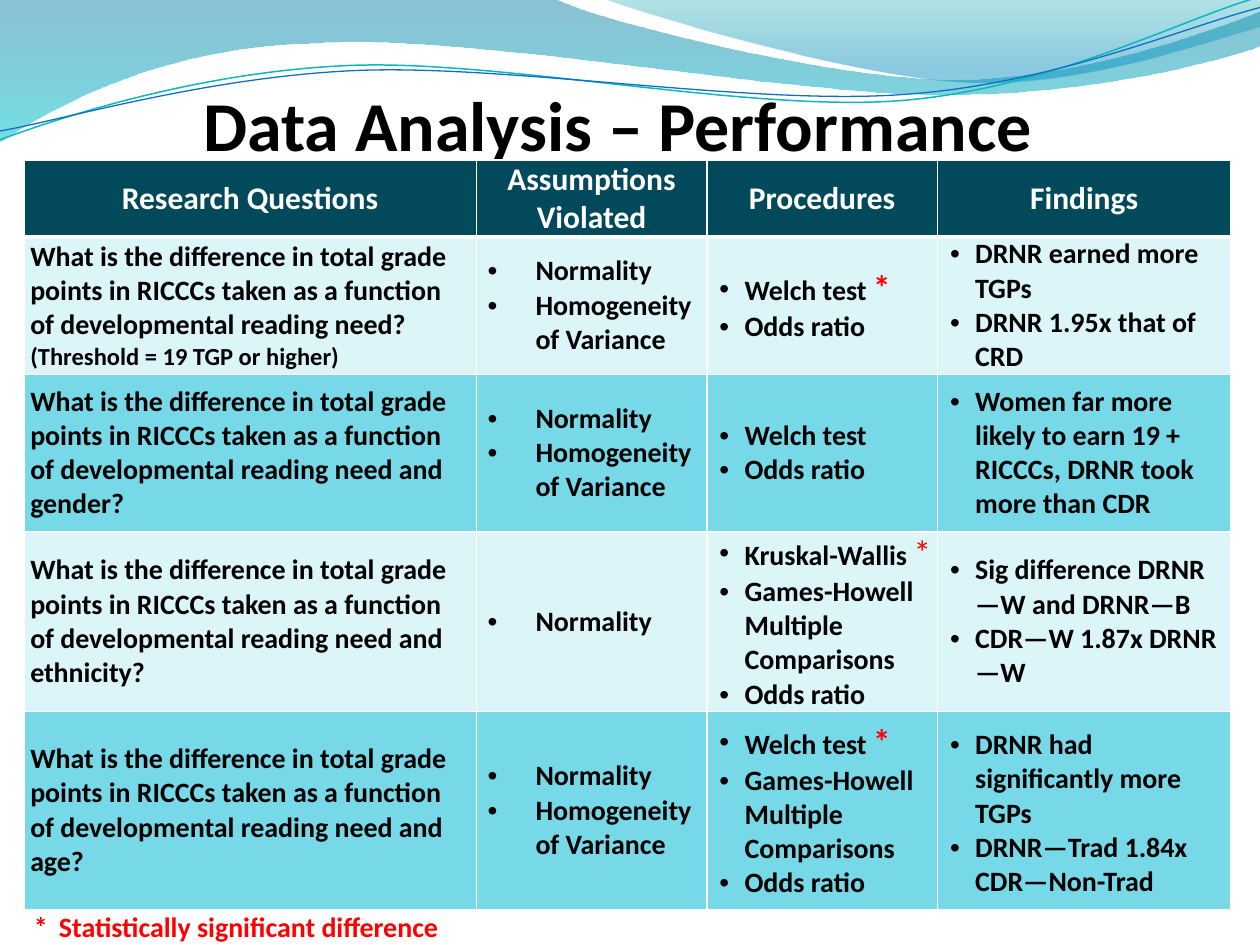
"""Build the Data Analysis slide: waves, title, findings table and footnote."""
from math import cos, radians, sin
from lxml.etree import Element, SubElement
from pptx import Presentation
from pptx.dml.color import RGBColor
from pptx.enum.text import MSO_ANCHOR, MSO_AUTO_SIZE, PP_ALIGN
from pptx.oxml.ns import qn
from pptx.util import Inches, Pt

BLACK, WHITE, RED = "000000", "FFFFFF", "FF0000"
HEADER_FILL, BANDS = "03495C", ("DBF5F9", "77D9E8")
STAR = ("*", 20, RED, True)
LIGHT_STAR = ("*", 20, RED, False)


def paint(color, value):
    color.rgb = RGBColor.from_string(value)


def add_run(para, text, size=16, color=BLACK, bold=True):
    span = para.add_run()
    span.text = text
    span.font.name = "Calibri"
    span.font.size = Pt(size)
    span.font.bold = bold
    paint(span.font.color, color)


deck = Presentation()
deck.slide_width, deck.slide_height = Inches(10), Inches(7.5)
column = deck.slide_width // 10
row = deck.slide_height / 7.5
page = deck.slides.add_slide(deck.slide_layouts[5])

waves = [
    {"start": (0, 0), "gradient": ((0, "0074A1", 45), (1, "00C6CF", 55)), "parts": [
        (4.4, -0.01), (4.76, 0.17, 6.64, 0.63, 7.58, 0.63), (8.53, 0.63, 9.58, 0.26, 10, 0.09),
        (10.01, 0.36), (9.83, 0.44, 8.7, 0.76, 7.46, 0.75), (6.22, 0.75, 3.82, 0.28, 2.57, 0.34),
        (1.29, 0.36, 0.46, 0.83, -0.01, 1.13), (0, 0)]},
    {"start": (4.79, -0.01), "gradient": ((0, "00A1A9", 30), (0.8, "008BBF", 45)), "parts": [
        (5.09, 0.11, 6.82, 0.62, 7.69, 0.65), (8.56, 0.69, 9.61, 0.32, 10, 0.21), (10, 0),
        (4.79, -0.01)]},
    {"start": (0, 1.11), "line": ("0AB8BF", 0.85), "center": (4.99, 0.57), "parts": [
        (0.48, 0.93, 1.58, 0.57, 2.77, 0.52), (3.95, 0.47, 5.93, 0.89, 7.13, 0.8),
        (8.33, 0.71, 9.38, 0.15, 9.98, -0.02)]},
    {"start": (0, 1.04), "line": ("0F6FC6", 0.75), "center": (5, 0.59), "parts": [
        (0.47, 0.96, 1.64, 0.61, 2.83, 0.56), (4.03, 0.51, 5.97, 0.84, 7.17, 0.75),
        (8.36, 0.67, 9.41, 0.21, 10, 0.06)]},
]
TILT = 2.7
for wave in waves:
    tilt = radians(TILT if "center" in wave else 0)
    cx, cy = wave.get("center", (0, 0))
    segments = []
    for part in [wave["start"]] + wave["parts"]:
        pairs = zip(part[::2], part[1::2])
        segments.append([(round((cx + (x - cx) * cos(tilt) - (y - cy) * sin(tilt)) * column),
                          round((cy + (x - cx) * sin(tilt) + (y - cy) * cos(tilt)) * row))
                         for x, y in pairs])
    builder = page.shapes.build_freeform(*segments[0][0])
    builder.add_line_segments([segment[-1] for segment in segments[1:]], close="gradient" in wave)
    ribbon = builder.convert_to_shape()
    ribbon.shadow.inherit = False
    for straight, segment in zip(list(ribbon.element.iter(qn("a:lnTo"))), segments[1:]):
        if len(segment) == 3:
            curve = Element(qn("a:cubicBezTo"))
            for x, y in segment:
                SubElement(curve, qn("a:pt"), x=str(x - ribbon.left), y=str(y - ribbon.top))
            straight.getparent().replace(straight, curve)
    if "gradient" in wave:
        ribbon.line.fill.background()
        ribbon.fill.gradient()
        ribbon.fill.gradient_angle = 270
        for stop, (position, value, _) in zip(ribbon.fill.gradient_stops, wave["gradient"]):
            stop.position = position
            paint(stop.color, value)
        for tint, (_, _, opacity) in zip(ribbon.element.iter(qn("a:srgbClr")), wave["gradient"]):
            SubElement(tint, qn("a:alpha"), val=str(opacity * 1000))
    else:
        value, weight = wave["line"]
        ribbon.rotation = 360 - TILT
        ribbon.fill.background()
        paint(ribbon.line.color, value)
        ribbon.line.width = Pt(weight)

title = page.shapes.title
title.element.getparent().append(title.element)
title.left, title.top = int(0.17 * column), int(0.52 * row)
title.width, title.height = int(9.59 * column), int(0.92 * row)
title.text_frame.auto_size = MSO_AUTO_SIZE.NONE
title.text_frame.vertical_anchor = MSO_ANCHOR.MIDDLE
para = title.text_frame.paragraphs[0]
para.alignment = PP_ALIGN.CENTER
add_run(para, "Data Analysis – Performance ", 40)

headings = ["Research Questions", "Assumptions Violated", "Procedures", "Findings"]
question = "What is the difference in total grade points in RICCCs taken as a function of developmental reading need"
normality, variance = [("Normality",)], [("Homogeneity of Variance",)]
welch, odds = ("Welch test ",), [("Odds ratio",)]
games = [("Games-Howell Multiple Comparisons",)]
body = [
    [[[(question + "?",)], [("(Threshold = 19 TGP or higher)", 14)]],
     [normality, variance], [[welch, STAR], odds],
     [[("DRNR earned more TGPs",)], [("DRNR 1.95x that of CRD",)]]],
    [[[(question + " and gender?",)]],
     [normality, variance], [[("Welch test",)], odds],
     [[("Women far more likely to earn 19 + RICCCs, DRNR took more than CDR",)]]],
    [[[(question + " and ethnicity?",)]],
     [normality], [[("Kruskal-Wallis ",), LIGHT_STAR], games, odds],
     [[("Sig difference DRNR—W and DRNR—B",)], [("CDR—W 1.87x DRNR—W",)]]],
    [[[(question + " and age?",)]],
     [normality, variance], [[welch, STAR], games, odds],
     [[("DRNR had significantly more TGPs",)], [("DRNR—Trad 1.84x CDR—Non-Trad",)]]],
]
grid = [[[[(heading, 18, WHITE)]] for heading in headings]] + body
widths, heights = (3.59, 1.83, 1.83, 2.33), (0.5, 1.09, 1.25, 1.25, 1.57)
indents = (None, (0.42, -0.38), (0.25, -0.2), (0.25, -0.2))
table = page.shapes.add_table(len(heights), len(widths), int(0.19 * column), int(1.27 * row),
                              int(sum(widths) * column), int(sum(heights) * row)).table
for table_column, width in zip(table.columns, widths):
    table_column.width = int(width * column)
for table_row, height in zip(table.rows, heights):
    table_row.height = int(height * row)

for r, cells in enumerate(grid):
    for c, paragraphs in enumerate(cells):
        cell = table.cell(r, c)
        cell.vertical_anchor = MSO_ANCHOR.MIDDLE
        cell.margin_left = cell.margin_right = int(0.05 * column)
        cell.margin_top = cell.margin_bottom = 0
        properties = cell._tc.get_or_add_tcPr()
        for side in ("lnL", "lnR", "lnT", "lnB"):
            thick = (r, side) in ((0, "lnB"), (1, "lnT"))
            border = SubElement(properties, qn("a:" + side), w=str(Pt(3 if thick else 1)))
            SubElement(SubElement(border, qn("a:solidFill")), qn("a:srgbClr"), val=WHITE)
        cell.fill.solid()
        paint(cell.fill.fore_color, BANDS[(r - 1) % 2] if r else HEADER_FILL)
        for index, spans in enumerate(paragraphs):
            para = cell.text_frame.add_paragraph() if index else cell.text_frame.paragraphs[0]
            para.alignment = PP_ALIGN.LEFT if r else PP_ALIGN.CENTER
            if r and indents[c]:
                layout = para._p.get_or_add_pPr()
                for name, length in zip(("marL", "indent"), indents[c]):
                    layout.set(name, str(int(length * column)))
                SubElement(layout, qn("a:buFont"), typeface="Arial")
                SubElement(layout, qn("a:buChar"), char="•")
            for span in spans:
                add_run(para, *span)
table.cell(4, 3).margin_top = int(0.05 * row)

box = page.shapes.add_textbox(int(0.17 * column), int(7.17 * row), int(4.5 * column), int(0.37 * row))
box.text_frame.word_wrap = True
box.text_frame.auto_size = MSO_AUTO_SIZE.SHAPE_TO_FIT_TEXT
para = box.text_frame.paragraphs[0]
layout = para._p.get_or_add_pPr()
layout.set("marL", str(int(0.2 * column)))
layout.set("indent", str(int(-0.2 * column)))
add_run(para, "*\tStatistically significant difference", color=RED)

deck.save("out.pptx")
